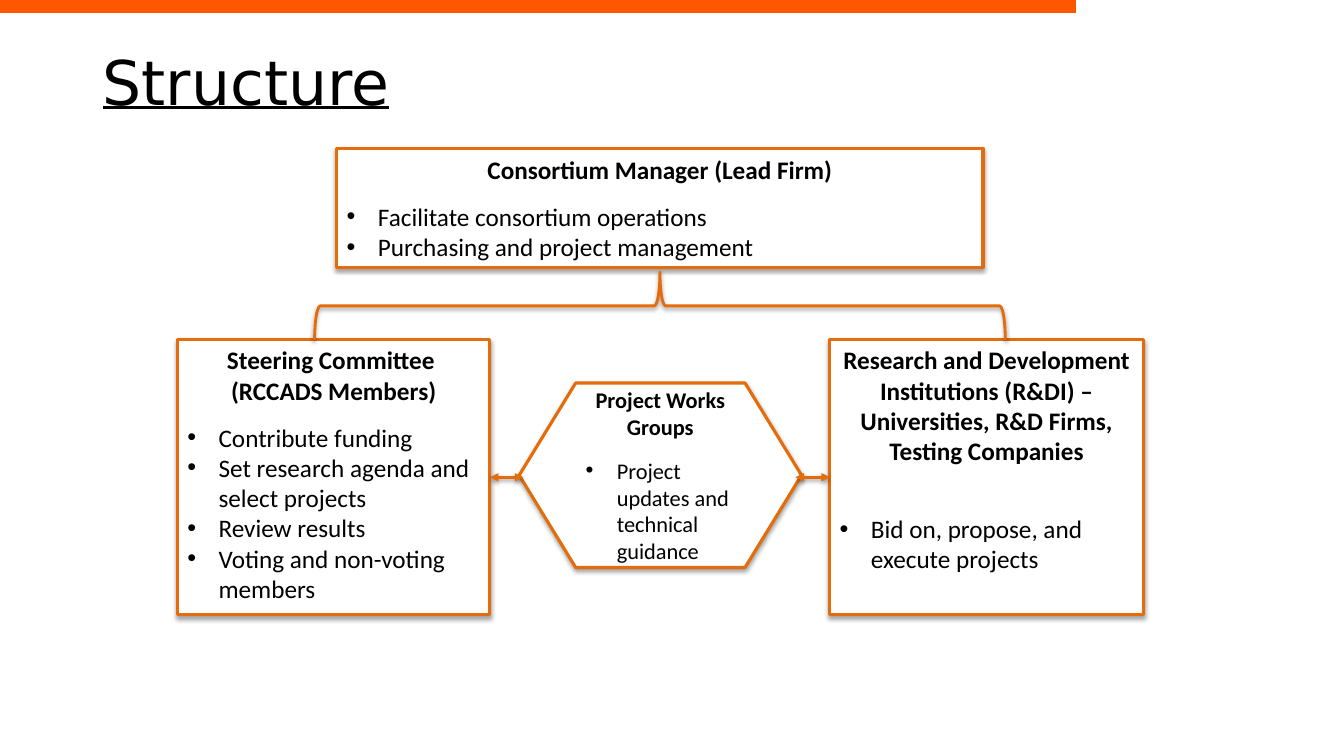
from lxml.etree import SubElement
from pptx import Presentation
from pptx.dml.color import RGBColor
from pptx.enum.shapes import MSO_CONNECTOR, MSO_SHAPE
from pptx.enum.text import MSO_ANCHOR, PP_ALIGN
from pptx.oxml.ns import qn
from pptx.util import Inches, Pt

BAR_ORANGE = RGBColor(0xFF, 0x57, 0x00)
LINE_ORANGE = RGBColor(0xE4, 0x6C, 0x0A)
WHITE = RGBColor(0xFF, 0xFF, 0xFF)
BLACK = RGBColor(0x00, 0x00, 0x00)


def add_shadow(shape, distance, opacity):
    """Give a shape or connector a soft shadow straight below it."""
    effects = SubElement(shape._element.spPr, qn("a:effectLst"))
    shadow = SubElement(effects, qn("a:outerShdw"), blurRad=str(Pt(3.1)),
                        dist=str(Pt(distance)), dir="5400000", rotWithShape="0")
    color = SubElement(shadow, qn("a:srgbClr"), val=str(BLACK))
    SubElement(color, qn("a:alpha"), val=str(opacity * 1000))


def add_role(preset, bounds, anchor, size, headings, bullets, gap):
    """Draw an outlined box with bold headings above a bulleted list."""
    box = page.shapes.add_shape(preset, *[Inches(value) for value in bounds])
    box.fill.solid()
    box.fill.fore_color.rgb = WHITE
    box.line.color.rgb = LINE_ORANGE
    box.line.width = Pt(2.25)
    add_shadow(box, 1.8, 35)
    frame = box.text_frame
    frame.word_wrap = True
    frame.vertical_anchor = anchor
    frame.text = "\n".join(headings + bullets)
    for index, para in enumerate(frame.paragraphs):
        is_heading = index < len(headings)
        para.alignment = PP_ALIGN.CENTER if is_heading else PP_ALIGN.LEFT
        if index == len(headings):
            para.space_before = Pt(gap)
        if not is_heading:
            properties = para._p.get_or_add_pPr()
            properties.set("marL", str(Inches(0.31)))
            properties.set("indent", str(-Inches(0.31)))
            SubElement(properties, qn("a:buFont"), typeface="Arial")
            SubElement(properties, qn("a:buChar"), char="•")
        for span in para.runs:
            span.font.name = "Calibri"
            span.font.size = Pt(size)
            span.font.bold = is_heading
            span.font.color.rgb = BLACK
    return box


deck = Presentation()
deck.slide_width = Inches(13.33)
deck.slide_height = Inches(7.5)
page = deck.slides.add_slide(deck.slide_layouts[6])

# Top bar
bar = page.shapes.add_shape(MSO_SHAPE.RECTANGLE, 0, 0, Inches(10.67), Inches(0.12))
bar.shadow.inherit = False
bar.fill.solid()
bar.fill.fore_color.rgb = BAR_ORANGE
bar.line.color.rgb = BAR_ORANGE
bar.line.width = Pt(0.5)

# Title
title = page.shapes.add_textbox(Inches(0.92), Inches(0.12), Inches(11.5), Inches(1.45))
title.text_frame.word_wrap = True
title.text_frame.vertical_anchor = MSO_ANCHOR.MIDDLE
title.text_frame.text = "Structure"
para = title.text_frame.paragraphs[0]
para.line_spacing = 0.9
span = para.runs[0]
span.font.name = "DejaVu Sans"
span.font.size = Pt(44)
span.font.underline = True
span.font.color.rgb = BLACK

# Committee, institutions and the work groups between them
committee = add_role(
    MSO_SHAPE.RECTANGLE, (1.76, 3.37, 3.1, 2.73), MSO_ANCHOR.TOP, 18,
    ["Steering Committee ", "(RCCADS Members)"],
    ["Contribute funding", "Set research agenda and select projects",
     "Review results", "Voting and non-voting members"], 12)
institutions = add_role(
    MSO_SHAPE.RECTANGLE, (8.23, 3.37, 3.11, 2.73), MSO_ANCHOR.TOP, 18,
    ["Research and Development Institutions (R&DI) – "
     "Universities, R&D Firms, Testing Companies"],
    ["Bid on, propose, and execute projects"], 34)
add_role(
    MSO_SHAPE.FLOWCHART_PREPARATION, (5.15, 3.8, 2.8, 1.83), MSO_ANCHOR.MIDDLE, 16,
    ["Project Works Groups"], ["Project updates and technical guidance"], 12)

# Double arrows from the work groups to each side box
middle = committee.top + committee.height // 2
for box, side, groups_end in ((committee, 3, 5.19), (institutions, 1, 7.89)):
    arrow = page.shapes.add_connector(
        MSO_CONNECTOR.STRAIGHT, Inches(groups_end), middle, box.left, middle)
    arrow.end_connect(box, side)
    arrow.line.color.rgb = LINE_ORANGE
    arrow.line.width = Pt(2)
    outline = arrow._element.spPr.find(qn("a:ln"))
    for tip in ("a:headEnd", "a:tailEnd"):
        SubElement(outline, qn(tip), type="triangle")
    add_shadow(arrow, 1.6, 38)

# Manager
add_role(
    MSO_SHAPE.RECTANGLE, (3.34, 1.47, 6.41, 1.18), MSO_ANCHOR.MIDDLE, 18,
    ["Consortium Manager (Lead Firm)"],
    ["Facilitate consortium operations", "Purchasing and project management"], 12)

# Brace from the manager to both side boxes
brace = page.shapes.add_shape(
    MSO_SHAPE.LEFT_BRACE, Inches(6.21), Inches(-0.39), Inches(0.67), Inches(6.85))
brace.rotation = 90
brace.fill.background()
brace.line.color.rgb = LINE_ORANGE
brace.line.width = Pt(2)
add_shadow(brace, 1.6, 38)

deck.save("out.pptx")
